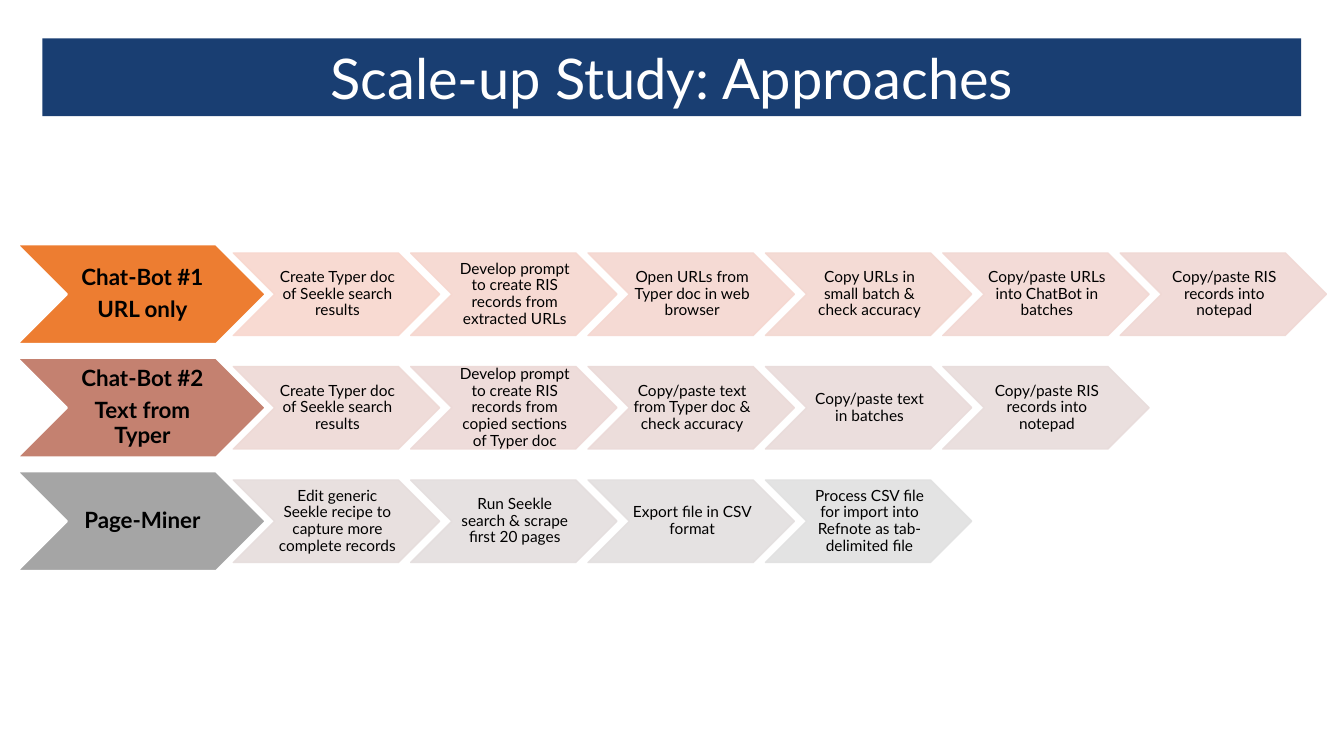
from dataclasses import dataclass

from lxml import etree
from pptx import Presentation
from pptx.dml.color import RGBColor
from pptx.enum.shapes import MSO_SHAPE
from pptx.enum.text import MSO_ANCHOR, MSO_AUTO_SIZE, PP_ALIGN
from pptx.oxml.ns import qn
from pptx.util import Cm, Pt

CHEVRON, RECTANGLE = MSO_SHAPE.CHEVRON, MSO_SHAPE.RECTANGLE
TOP, MIDDLE = MSO_ANCHOR.TOP, MSO_ANCHOR.MIDDLE
CENTER = PP_ALIGN.CENTER
GROW = MSO_AUTO_SIZE.SHAPE_TO_FIT_TEXT


@dataclass(frozen=True)
class Theme:
    font: str = "Lato"
    banner: str = "193E72"
    light: str = "FFFFFF"
    dark: str = "000000"
    title_size: float = 40
    label_size: float = 16
    step_size: float = 11
    label_line: float = 1.5
    step_line: float = 1
    step_opacity: int = 90


THEME = Theme()

# Each approach: label lines, label colour, then (step text, step colour)
APPROACHES = [
    (["Chat-Bot #1", "URL only"], "ED7D31", [
        ("Create Typer doc of Seekle search results", "F8D7CE"),
        ("Develop prompt to create RIS records from extracted URLs", "F6D7CF"),
        ("Open URLs from Typer doc in web browser", "F5D7D0"),
        ("Copy URLs in small batch & check accuracy", "F3D8D1"),
        ("Copy/paste URLs into ChatBot in batches", "F2D8D3"),
        ("Copy/paste RIS records into notepad", "F0D8D4"),
    ]),
    (["Chat-Bot #2", "Text from Typer"], "C48170", [
        ("Create Typer doc of Seekle search results", "EED9D5"),
        ("Develop prompt to create RIS records from copied sections of Typer doc",
         "EDD9D7"),
        ("Copy/paste text from Typer doc & check accuracy", "EBDAD8"),
        ("Copy/paste text in batches", "E9DBDA"),
        ("Copy/paste RIS records into notepad", "E8DCDB"),
    ]),
    (["Page-Miner"], "A5A5A5", [
        ("Edit generic Seekle recipe to capture more complete records", "E6DDDC"),
        ("Run Seekle search & scrape first 20 pages", "E4DEDE"),
        ("Export file in CSV format", "E3DFDF"),
        ("Process CSV file for import into Refnote as tab-delimited file", "E1E1E1"),
    ]),
]

LABEL_LEFT, LABEL_WIDTH, LABEL_HEIGHT = 0.43, 6.27, 2.51
STEP_LEFT, STEP_WIDTH, STEP_HEIGHT = 5.88, 5.2, 2.08
FIRST_TOP, ROW_PITCH, STEP_PITCH = 6.16, 2.86, 4.47


def set_all(target, values):
    for name, value in values.items():
        setattr(target, name, value)


def add_block(page, kind, left, top, width, height, colour):
    block = page.shapes.add_shape(kind, Cm(left), Cm(top), Cm(width), Cm(height))
    block.shadow.inherit = False
    block.fill.solid()
    block.fill.fore_color.rgb = RGBColor.from_string(colour)
    return block


def outline(block, colour, width):
    block.line.color.rgb = RGBColor.from_string(colour)
    block.line.width = Pt(width)


def set_opacity(block, percent):
    """Apply the opacity to the fill and outline colours."""
    for colour in block._element.spPr.iter(qn("a:srgbClr")):
        etree.SubElement(colour, qn("a:alpha"), val=str(percent * 1000))


def write(block, lines, size, colour, frame_format, para_format, bold=False):
    frame = block.text_frame
    set_all(frame, {"word_wrap": True, **frame_format})
    for index, line in enumerate(lines):
        para = frame.add_paragraph() if index else frame.paragraphs[0]
        set_all(para, {"alignment": CENTER, **para_format})
        if index:
            para.space_before = Pt(0.35 * size)
        span = para.add_run()
        span.text = line
        set_all(span.font, {"name": THEME.font, "size": Pt(size), "bold": bold})
        span.font.color.rgb = RGBColor.from_string(colour)


def write_chevron(block, lines, size, bold=False):
    frame_format = {
        "vertical_anchor": MIDDLE,
        "margin_left": Cm(0.05),
        "margin_right": Cm(0),
        "margin_top": Cm(0.03),
        "margin_bottom": Cm(0.03),
    }
    write(block, lines, size, THEME.dark, frame_format, {"line_spacing": 0.9}, bold)


def add_title(page, text):
    banner = add_block(page, RECTANGLE, 1.07, 0.97, 31.72, 1.96, THEME.banner)
    banner.line.fill.background()
    frame_format = {"vertical_anchor": TOP, "auto_size": GROW}
    write(banner, [text], THEME.title_size, THEME.light, frame_format, {})


def add_label(page, top, lines, colour):
    label = add_block(page, CHEVRON, LABEL_LEFT, top, LABEL_WIDTH, LABEL_HEIGHT, colour)
    outline(label, THEME.light, THEME.label_line)
    write_chevron(label, lines, THEME.label_size, bold=True)


def add_step(page, left, top, text, colour):
    step = add_block(page, CHEVRON, left, top, STEP_WIDTH, STEP_HEIGHT, colour)
    outline(step, colour, THEME.step_line)
    set_opacity(step, THEME.step_opacity)
    write_chevron(step, [text], THEME.step_size)


def add_approach(page, top, lines, colour, steps):
    add_label(page, top, lines, colour)
    step_top = top + (LABEL_HEIGHT - STEP_HEIGHT) / 2
    for column, (text, step_colour) in enumerate(steps):
        add_step(page, STEP_LEFT + column * STEP_PITCH, step_top, text, step_colour)


def main():
    deck = Presentation()
    set_all(deck, {"slide_width": Cm(33.87), "slide_height": Cm(19.05)})
    page = deck.slides.add_slide(deck.slide_layouts[6])
    add_title(page, "Scale-up Study: Approaches")
    for row, approach in enumerate(APPROACHES):
        add_approach(page, FIRST_TOP + row * ROW_PITCH, *approach)
    deck.save("out.pptx")


if __name__ == "__main__":
    main()
